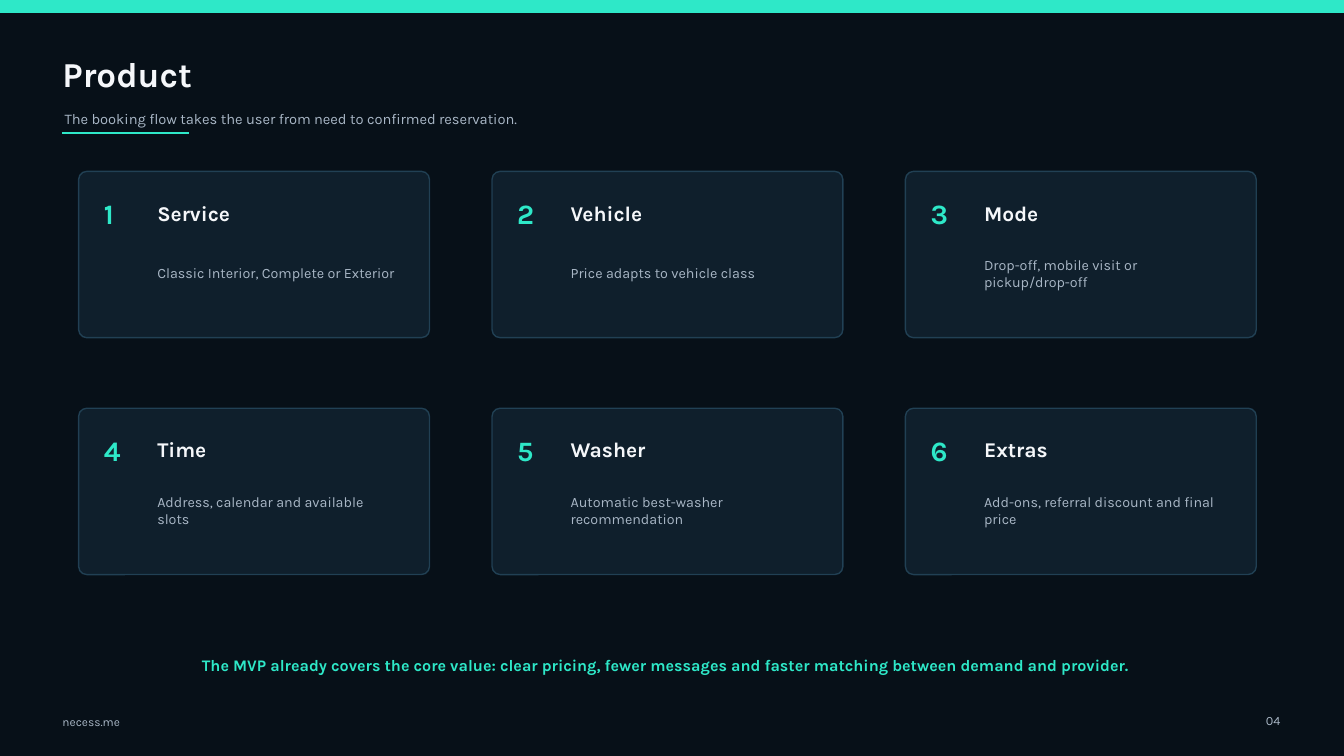
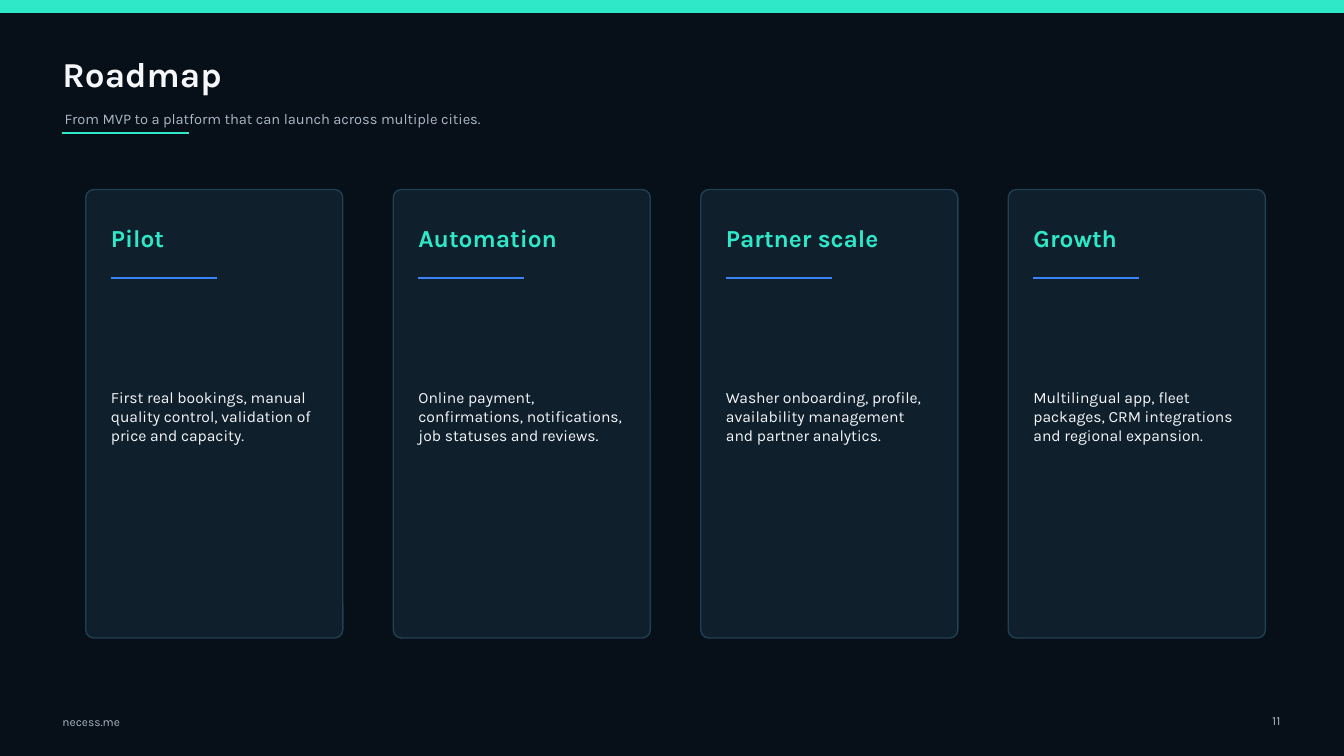
import dataclasses

import lxml.etree
import pptx
import pptx.dml.color
import pptx.enum.shapes
import pptx.enum.text
import pptx.oxml.ns
import pptx.util

ALIGN = pptx.enum.text.PP_ALIGN
SHAPE = pptx.enum.shapes.MSO_SHAPE
EMU_PER_PX = 9144  # 100 px to the inch
SLIDE_WIDTH, SLIDE_HEIGHT = 1333, 750


def px(length):
    return pptx.util.Emu(length * EMU_PER_PX)


def rgb(color):
    return pptx.dml.color.RGBColor.from_string(color)


@dataclasses.dataclass(frozen=True)
class TextStyle:
    size: float
    color: str
    bold: bool = False


@dataclasses.dataclass(frozen=True)
class Theme:
    font: str = "Karla"
    background: str = "071018"
    accent: str = "2EE8C8"
    rule: str = "3B82F6"
    card: str = "0F1F2C"
    card_border: str = "25475C"
    card_border_opacity: int = 85
    card_radius: int = 8
    title: TextStyle = TextStyle(25, "F5F7FA", True)
    subtitle: TextStyle = TextStyle(10.5, "A9B7C6")
    footer: TextStyle = TextStyle(8.5, "A9B7C6")
    page_number: TextStyle = TextStyle(9, "A9B7C6")
    step_number: TextStyle = TextStyle(20, "2EE8C8", True)
    step_title: TextStyle = TextStyle(15, "F5F7FA", True)
    step_detail: TextStyle = TextStyle(10.2, "A9B7C6")
    takeaway: TextStyle = TextStyle(11.5, "2EE8C8", True)
    phase_title: TextStyle = TextStyle(17.5, "2EE8C8", True)
    phase_detail: TextStyle = TextStyle(11.2, "F5F7FA")


class Deck:
    """Holds the theme, the presentation and the slide being drawn."""

    def __init__(self, theme):
        self.theme = theme
        self.presentation = pptx.Presentation()
        self.presentation.slide_width = px(SLIDE_WIDTH)
        self.presentation.slide_height = px(SLIDE_HEIGHT)
        self.slide = None

    def start_slide(self, title, subtitle, page):
        """Add a slide with the band, heading and footer that all slides share."""
        theme = self.theme
        self.slide = self.presentation.slides.add_slide(self.presentation.slide_layouts[6])
        fill = self.slide.background.fill
        fill.solid()
        fill.fore_color.rgb = rgb(theme.background)
        self.box(SHAPE.RECTANGLE, 0, 0, SLIDE_WIDTH, 12, theme.accent, theme.accent)
        self.text(title, 62, 45, 880, 55, theme.title)
        self.text(subtitle, 64, 100, 920, 36, theme.subtitle)
        self.rule(62, 132, 125, theme.accent, 2)
        self.text("necess.me", 62, 705, 140, 22, theme.footer)
        self.text(f"{page:02}", 1225, 702, 45, 25, theme.page_number, ALIGN.RIGHT)

    def box(self, kind, left, top, width, height, fill, border):
        shape = self.slide.shapes.add_shape(kind, px(left), px(top), px(width), px(height))
        shape.shadow.inherit = False
        shape.fill.solid()
        shape.fill.fore_color.rgb = rgb(fill)
        shape.line.color.rgb = rgb(border)
        shape.line.width = pptx.util.Pt(1)
        return shape

    def card(self, left, top, width, height):
        theme = self.theme
        shape = self.box(SHAPE.ROUNDED_RECTANGLE, left, top, width, height,
                         theme.card, theme.card_border)
        shape.adjustments[0] = theme.card_radius / min(width, height)
        color = shape.line._ln.find(".//" + pptx.oxml.ns.qn("a:srgbClr"))
        alpha = lxml.etree.SubElement(color, pptx.oxml.ns.qn("a:alpha"))
        alpha.set("val", str(theme.card_border_opacity * 1000))

    def text(self, content, left, top, width, height, style, alignment=ALIGN.LEFT):
        shape = self.slide.shapes.add_textbox(px(left), px(top), px(width), px(height))
        frame = shape.text_frame
        frame.word_wrap = True
        frame.vertical_anchor = pptx.enum.text.MSO_ANCHOR.MIDDLE
        frame.margin_left = frame.margin_right = frame.margin_top = frame.margin_bottom = 0
        paragraph = frame.paragraphs[0]
        paragraph.text = content
        paragraph.alignment = alignment
        font = paragraph.font
        font.name = self.theme.font
        font.size = pptx.util.Pt(style.size)
        font.bold = style.bold
        font.color.rgb = rgb(style.color)

    def rule(self, left, top, width, color, weight):
        """Draw a horizontal line."""
        line = self.slide.shapes.add_connector(
            pptx.enum.shapes.MSO_CONNECTOR.STRAIGHT,
            px(left), px(top), px(left + width), px(top))
        line.line.color.rgb = rgb(color)
        line.line.width = pptx.util.Pt(weight)
        lxml.etree.SubElement(line._element.spPr, pptx.oxml.ns.qn("a:effectLst"))

    def step(self, number, title, detail, left, top):
        theme = self.theme
        self.card(left, top, 348, 165)
        self.text(str(number), left + 25, top + 24, 38, 36, theme.step_number)
        self.text(title, left + 78, top + 27, 245, 28, theme.step_title)
        self.text(detail, left + 78, top + 72, 238, 58, theme.step_detail)

    def phase(self, title, detail, left, top):
        theme = self.theme
        inner_left = left + 25
        self.card(left, top, 255, 445)
        self.text(title, inner_left, top + 32, 205, 32, theme.phase_title)
        self.rule(inner_left, top + 88, 105, theme.rule, 1.5)
        self.text(detail, inner_left, top + 120, 202, 210, theme.phase_detail)


STEPS = [
    ("Service", "Classic Interior, Complete or Exterior"),
    ("Vehicle", "Price adapts to vehicle class"),
    ("Mode", "Drop-off, mobile visit or pickup/drop-off"),
    ("Time", "Address, calendar and available slots"),
    ("Washer", "Automatic best-washer recommendation"),
    ("Extras", "Add-ons, referral discount and final price"),
]

PHASES = [
    ("Pilot", "First real bookings, manual quality control, validation of price and capacity."),
    ("Automation", "Online payment, confirmations, notifications, job statuses and reviews."),
    ("Partner scale",
     "Washer onboarding, profile, availability management and partner analytics."),
    ("Growth", "Multilingual app, fleet packages, CRM integrations and regional expansion."),
]


def add_product_slide(deck):
    deck.start_slide(
        "Product", "The booking flow takes the user from need to confirmed reservation.", 4)
    for index, (title, detail) in enumerate(STEPS):
        row, column = divmod(index, 3)
        deck.step(index + 1, title, detail, 78 + 410 * column, 170 + 235 * row)
    deck.text(
        "The MVP already covers the core value: clear pricing, fewer messages "
        "and faster matching between demand and provider.",
        100, 642, 1120, 35, deck.theme.takeaway, ALIGN.CENTER)


def add_roadmap_slide(deck):
    deck.start_slide(
        "Roadmap", "From MVP to a platform that can launch across multiple cities.", 11)
    for column, (title, detail) in enumerate(PHASES):
        deck.phase(title, detail, 85 + 305 * column, 188)


def main():
    deck = Deck(Theme())
    add_product_slide(deck)
    add_roadmap_slide(deck)
    deck.presentation.save("out.pptx")


if __name__ == "__main__":
    main()
